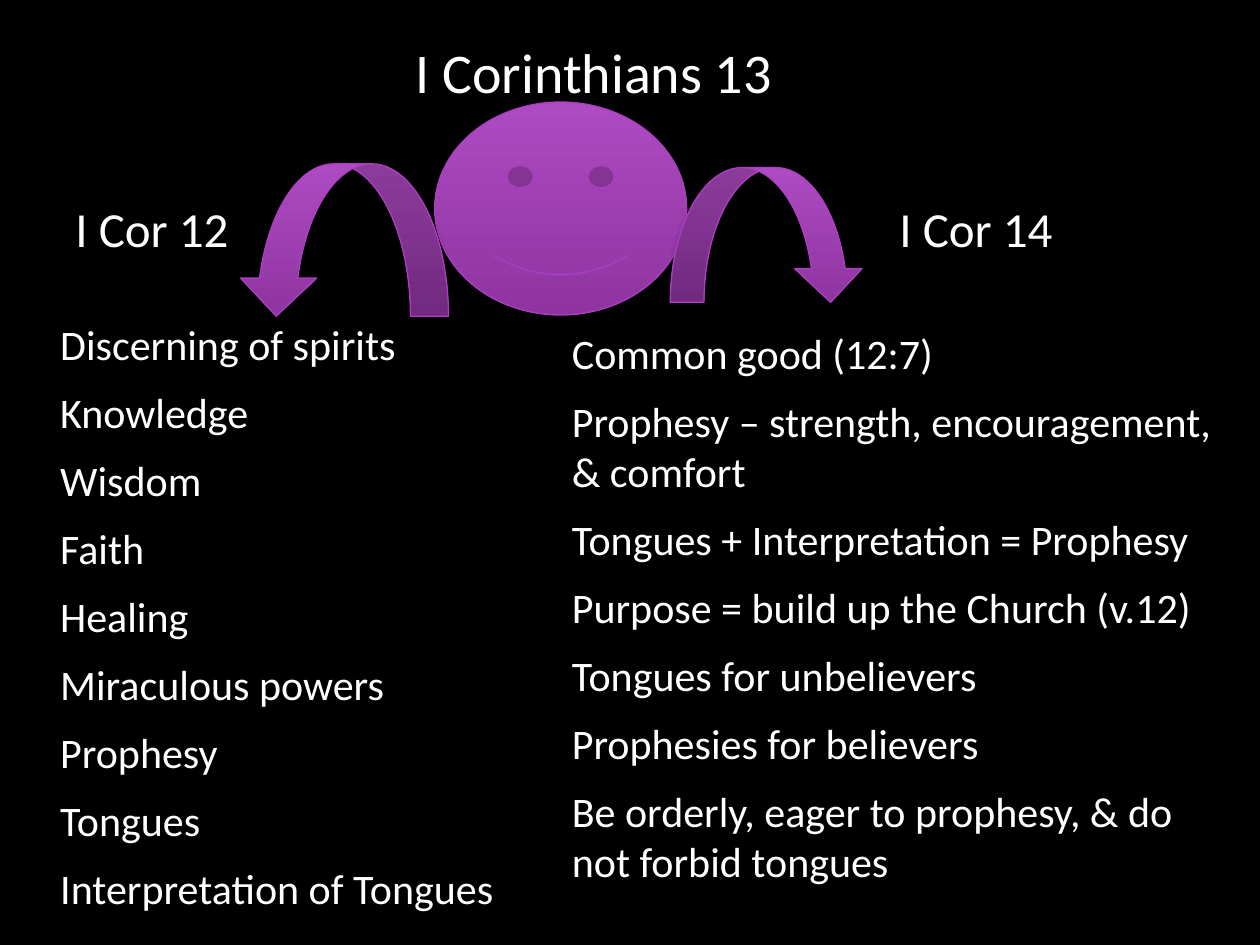
from dataclasses import dataclass

from lxml import etree
from pptx import Presentation
from pptx import util as u
from pptx.dml.color import RGBColor
from pptx.enum import shapes, text
from pptx.oxml.ns import qn


@dataclass(frozen=True)
class Theme:
    font: str = "Calibri"
    background: str = "000000"
    ink: str = "FFFFFF"
    gradient: tuple = ("AE4AC2", "8F34A1")
    outline: str = "AC3EC1"
    title_size: int = 32
    label_size: int = 28
    body_size: int = 24
    body_gap: int = 10


class SlideBuilder:
    """Draws styled elements on the current slide."""

    def __init__(self, presentation, theme):
        self.theme = theme
        self.slide = presentation.slides.add_slide(presentation.slide_layouts[5])
        fill = self.slide.background.fill
        fill.solid()
        fill.fore_color.rgb = RGBColor.from_string(theme.background)

    def add_words(self, paragraph, words, size):
        paragraph.alignment = text.PP_ALIGN.LEFT
        run = paragraph.add_run()
        run.text = words
        run.font.name = self.theme.font
        run.font.size = u.Pt(size)
        run.font.color.rgb = RGBColor.from_string(self.theme.ink)

    def title(self, words, left, top, width, height):
        shape = self.slide.shapes.title
        shape.left, shape.top = u.Inches(left), u.Inches(top)
        shape.width, shape.height = u.Inches(width), u.Inches(height)
        frame = shape.text_frame
        frame.auto_size = text.MSO_AUTO_SIZE.NONE
        frame.vertical_anchor = text.MSO_ANCHOR.TOP
        self.add_words(frame.paragraphs[0], words, self.theme.title_size)

    def text_box(self, left, top, width, height):
        box = self.slide.shapes.add_textbox(*map(u.Inches, (left, top, width, height)))
        box.text_frame.word_wrap = True
        return box.text_frame

    def label(self, words, left, top, width, height):
        frame = self.text_box(left, top, width, height)
        frame.auto_size = text.MSO_AUTO_SIZE.SHAPE_TO_FIT_TEXT
        self.add_words(frame.paragraphs[0], words, self.theme.label_size)

    def points(self, lines, left, top, width, height, top_inset=0.05, hanging=0):
        frame = self.text_box(left, top, width, height)
        frame.vertical_anchor = text.MSO_ANCHOR.MIDDLE
        frame.margin_top = u.Inches(top_inset)
        for index, line in enumerate(lines):
            paragraph = frame.add_paragraph() if index else frame.paragraphs[0]
            properties = paragraph._p.get_or_add_pPr()
            properties.set("marL", str(u.Inches(hanging)))
            properties.set("indent", str(-u.Inches(hanging)))
            paragraph.space_after = u.Pt(self.theme.body_gap)
            self.add_words(paragraph, line, self.theme.body_size)

    def figure(self, kind, left, top, width, height, mirrored=False):
        shape = self.slide.shapes.add_shape(
            kind, *map(u.Inches, (left, top, width, height))
        )
        shape.fill.gradient()
        shape.fill.gradient_angle = 270
        for stop, color in zip(shape.fill.gradient_stops, self.theme.gradient):
            stop.color.rgb = RGBColor.from_string(color)
        shape.line.color.rgb = RGBColor.from_string(self.theme.outline)
        shape.line.width = u.Pt(0.75)
        if mirrored:
            shape.element.spPr.find(qn("a:xfrm")).set("flipH", "1")
        self.drop_shadow(shape)

    def drop_shadow(self, shape):
        shape.shadow.inherit = False
        effects = shape.element.spPr.find(qn("a:effectLst"))
        shadow = etree.SubElement(
            effects, qn("a:outerShdw"), blurRad=str(u.Pt(4)), dist=str(u.Pt(3)),
            dir="5400000", rotWithShape="0",
        )
        color = etree.SubElement(shadow, qn("a:srgbClr"), val="000000")
        etree.SubElement(color, qn("a:alpha"), val="35000")


def main():
    presentation = Presentation()
    presentation.slide_width = u.Inches(10)
    presentation.slide_height = u.Inches(7.5)
    builder = SlideBuilder(presentation, Theme())

    gifts = (
        "Discerning of spirits", "Knowledge", "Wisdom", "Faith", "Healing",
        "Miraculous powers", "Prophesy", "Tongues", "Interpretation of Tongues",
    )
    teachings = (
        "Common good (12:7)",
        "Prophesy – strength, encouragement, & comfort",
        "Tongues + Interpretation = Prophesy",
        "Purpose = build up the Church (v.12)",
        "Tongues for unbelievers",
        "Prophesies for believers",
        "Be orderly, eager to prophesy, & do not forbid tongues",
    )
    builder.points(gifts, 0.38, 2.1, 4.17, 5.15, top_inset=0.47, hanging=0.31)
    builder.points(teachings, 4.44, 2.24, 5.45, 5.15)

    kinds = shapes.MSO_SHAPE
    builder.figure(kinds.SMILEY_FACE, 3.45, 0.81, 2, 1.69)
    builder.figure(kinds.CURVED_DOWN_ARROW, 5.32, 1.33, 1.54, 1.07)
    builder.figure(kinds.CURVED_DOWN_ARROW, 1.89, 1.3, 1.67, 1.21, mirrored=True)

    builder.label("I Cor 12", 0.5, 1.53, 2.19, 0.57)
    builder.label("I Cor 14", 7.04, 1.53, 2.46, 0.57)
    builder.title("I Corinthians 13", 3.2, 0.25, 3.84, 0.64)
    presentation.save("out.pptx")


if __name__ == "__main__":
    main()
